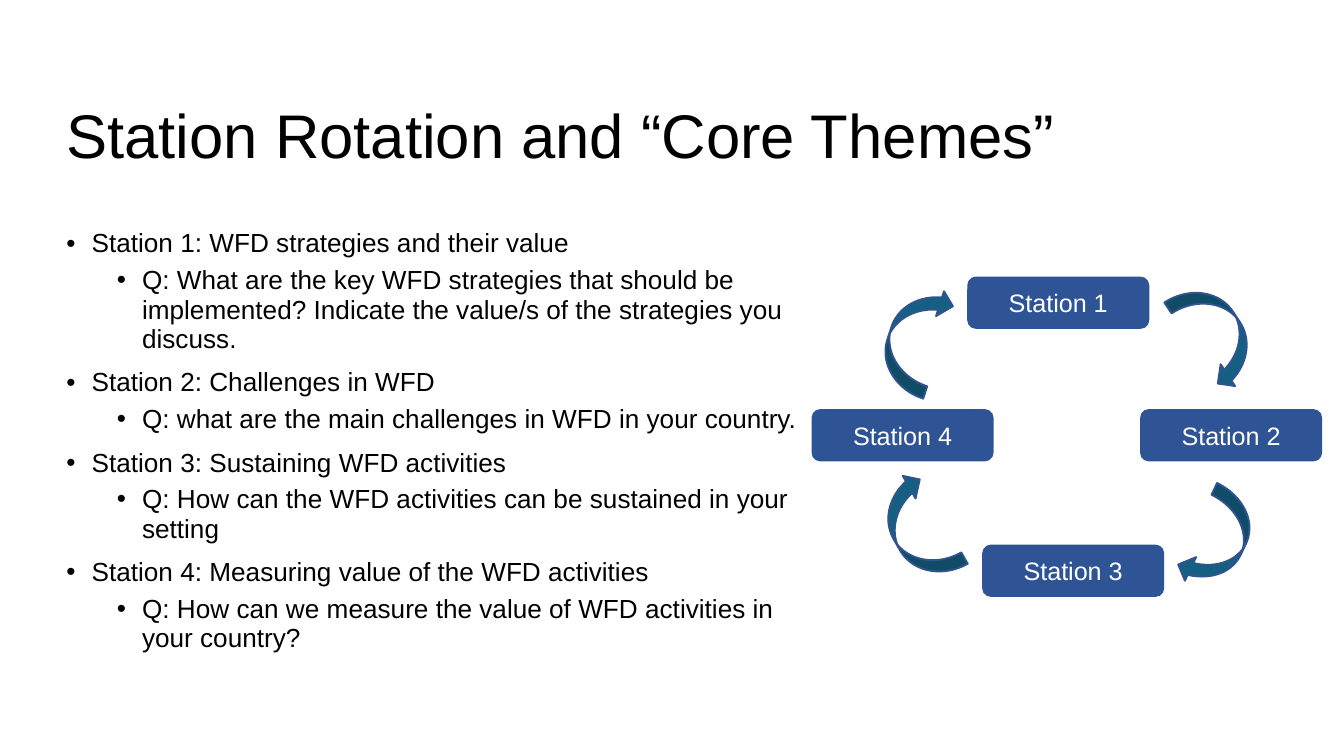
from pptx import Presentation
from pptx.dml.color import RGBColor
from pptx.enum.shapes import MSO_SHAPE as SHAPE
from pptx.enum.text import MSO_ANCHOR as ANCHOR, PP_ALIGN as ALIGN
from pptx.oxml.ns import qn
from pptx.util import Pt
from lxml.etree import SubElement

THEMES = [
    ("Station 1: WFD strategies and their value",
     "Q: What are the key WFD strategies that should be implemented? "
     "Indicate the value/s of the strategies you discuss."),
    ("Station 2: Challenges in WFD",
     "Q: what are the main challenges in WFD in your country."),
    ("Station 3: Sustaining WFD activities",
     "Q: How can the WFD activities can be sustained in your setting"),
    ("Station 4: Measuring value of the WFD activities",
     "Q: How can we measure the value of WFD activities in your country?"),
]
STATIONS = [("Station 1", 518.2, 148.2), ("Station 4", 434.8, 219.2),
            ("Station 2", 610.8, 219.2), ("Station 3", 526.2, 291.8)]
ARROWS = [(622.2, 165, 59, 56.6), (625, 275.8, 55.4, 115.5),
          (462.2, 269.3, 59, 240.3), (460.8, 167.2, 59, 287.8)]


def rgb(value):
    """Turn a hex string into a colour."""
    return RGBColor.from_string(value)


def style(p, size, color):
    """Set the font of every run in a paragraph."""
    for r in p.runs:
        r.font.name, r.font.size = "Arial", Pt(size)
        r.font.color.rgb = rgb(color)


def set_frame(tf, anchor):
    """Set wrapping, anchor and insets of a text frame."""
    tf.word_wrap, tf.vertical_anchor = True, anchor
    tf.margin_left = tf.margin_right = Pt(5.4)
    tf.margin_top = tf.margin_bottom = Pt(2.7)


def add_text(s, left, top, width, height, anchor):
    """Add an empty text box and return its frame."""
    tf = s.shapes.add_textbox(Pt(left), Pt(top), Pt(width), Pt(height)).text_frame
    set_frame(tf, anchor)
    return tf


def add_title(s, text):
    """Add the slide title."""
    p = add_text(s, 30.2, 28.1, 595.4, 92.2, ANCHOR.MIDDLE).paragraphs[0]
    p.text, p.line_spacing = text, 0.9
    style(p, 33, "000000")


def add_bullet(p, text, level, before):
    """Fill a paragraph as a bullet at the given level."""
    p.text, p.level = text, level
    p.line_spacing, p.space_before = 0.94, Pt(before)
    pPr = p._p.get_or_add_pPr()
    pPr.set("marL", str(Pt(13.5 + 27 * level)))
    pPr.set("indent", str(Pt(-13.5)))
    SubElement(pPr, qn("a:buFont"), typeface="Arial")
    SubElement(pPr, qn("a:buChar"), char="•")
    style(p, 14, "000000")


def add_themes(s, themes):
    """Add the list of stations with their questions."""
    tf = add_text(s, 30.2, 120.2, 415.4, 216.7, ANCHOR.TOP)
    for i, (station, question) in enumerate(themes):
        p = tf.add_paragraph() if i else tf.paragraphs[0]
        add_bullet(p, station, 0, 7.5 if i else 0)
        add_bullet(tf.add_paragraph(), question, 1, 3.8)


def add_shape(s, kind, left, top, width, fill):
    """Add a filled shape of the common height without a shadow."""
    sp = s.shapes.add_shape(kind, Pt(left), Pt(top), Pt(width), Pt(28))
    sp.shadow.inherit = False
    sp.fill.solid()
    sp.fill.fore_color.rgb = rgb(fill)
    return sp


def add_station(s, text, left, top):
    """Add a labelled station box."""
    sp = add_shape(s, SHAPE.ROUNDED_RECTANGLE, left, top, 97.5, "2F5496")
    sp.line.fill.background()
    set_frame(sp.text_frame, ANCHOR.MIDDLE)
    p = sp.text_frame.paragraphs[0]
    p.text, p.alignment = text, ALIGN.CENTER
    style(p, 13.5, "FFFFFF")


def add_arrow(s, left, top, width, angle):
    """Add a curved arrow turned by an angle."""
    sp = add_shape(s, SHAPE.CURVED_DOWN_ARROW, left, top, width, "156082")
    sp.line.color.rgb, sp.line.width = rgb("31538F"), Pt(1)
    sp.rotation = angle


def main():
    """Build the slide and save it."""
    prs = Presentation()
    prs.slide_width, prs.slide_height = Pt(720), Pt(405)
    s = prs.slides.add_slide(prs.slide_layouts[6])
    add_title(s, "Station Rotation and “Core Themes”")
    add_themes(s, THEMES)
    for station in STATIONS:
        add_station(s, *station)
    for arrow in ARROWS:
        add_arrow(s, *arrow)
    prs.save("out.pptx")


if __name__ == "__main__":
    main()
